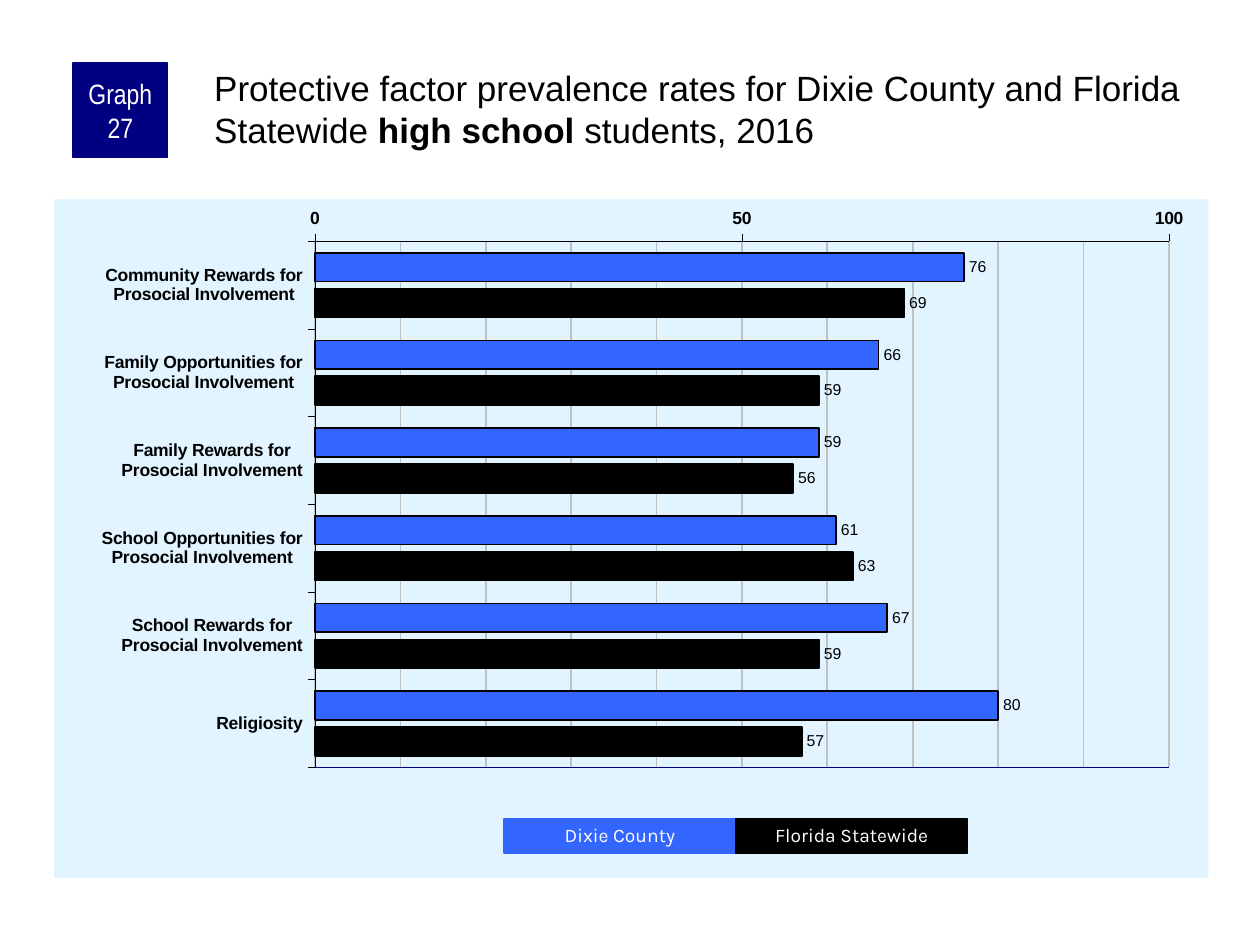
"""Build a slide with a bar chart of protective factor prevalence rates."""
from lxml.etree import SubElement
from pptx import Presentation
from pptx.chart.data import CategoryChartData
from pptx.dml.color import RGBColor
from pptx.enum.chart import XL_AXIS_CROSSES as Crosses
from pptx.enum.chart import XL_CHART_TYPE as ChartType
from pptx.enum.chart import XL_LABEL_POSITION as LabelPosition
from pptx.enum.chart import XL_TICK_MARK as TickMark
from pptx.enum.shapes import MSO_CONNECTOR as Connector
from pptx.enum.shapes import MSO_SHAPE as Shape
from pptx.enum.text import MSO_ANCHOR as Anchor
from pptx.enum.text import PP_ALIGN as Align
from pptx.oxml import parse_xml
from pptx.oxml.ns import nsdecls, qn
from pptx.util import Inches, Pt

COLORS = {"county": "3366FF", "state": "000000", "navy": "000080", "panel": "E1F4FF",
          "grid": "C0C0C0", "ink": "000000", "white": "FFFFFF"}

deck = Presentation()
deck.slide_width, deck.slide_height = Inches(10), Inches(7.5)
page = deck.slides.add_slide(deck.slide_layouts[6])


def area(left, top, width, height):
    """Turn percentages of the slide's size into lengths."""
    wide, high = deck.slide_width / 100, deck.slide_height / 100
    return int(left * wide), int(top * high), int(width * wide), int(height * high)


def style_font(font, size, color, name="Arial", bold=False):
    """Set the face, size, weight and colour of a font."""
    font.name, font.size, font.bold = name, Pt(size), bold
    font.color.rgb = RGBColor.from_string(COLORS[color])


involvement = "Prosocial Involvement"
factors = ["Community Rewards", "Family Opportunities", "Family Rewards",
           "School Opportunities", "School Rewards"]
rates = {"Series 1": (76, 66, 59, 61, 67, 80), "Series 2": (69, 59, 56, 63, 59, 57)}

data = CategoryChartData(number_format="0")
data.categories = [f"{factor} for\n{involvement}" for factor in factors] + ["Religiosity"]
for name, values in rates.items():
    data.add_series(name, values)

chart_area = area(4.3, 21.07, 91.6, 71.87)
chart = page.shapes.add_chart(ChartType.BAR_CLUSTERED, *chart_area, data).chart
chart.has_legend = False
chart.has_title = False
style_font(chart.font, 11.8, "ink")
plot = chart.plots[0]
plot.gap_width, plot.overlap, plot.vary_by_categories = 80, -25, False

for series, color in zip(plot.series, ("county", "state")):
    series.format.fill.solid()
    series.format.fill.fore_color.rgb = RGBColor.from_string(COLORS[color])
    series.format.line.color.rgb = RGBColor.from_string(COLORS["ink"])
    series.format.line.width = Pt(1)
    labels = series.data_labels
    labels.show_value, labels.position = True, LabelPosition.OUTSIDE_END
    style_font(labels.font, 9, "ink")

factor_axis, rate_axis = chart.category_axis, chart.value_axis
for axis in (factor_axis, rate_axis):
    axis.major_tick_mark, axis.minor_tick_mark = TickMark.OUTSIDE, TickMark.NONE
    style_font(axis.tick_labels.font, 10, "ink", bold=True)
    axis.format.line.color.rgb = RGBColor.from_string(COLORS["ink"])
    axis.format.line.width = Pt(0.25)
factor_axis.reverse_order = True
factor_axis.crosses = Crosses.MAXIMUM
rate_axis.minimum_scale, rate_axis.maximum_scale = 0, 100
rate_axis.major_unit, rate_axis.minor_unit = 50, 10
rate_axis.has_minor_gridlines = True
grid_line = rate_axis.major_gridlines.format.line
grid_line.color.rgb = RGBColor.from_string(COLORS["grid"])
grid_line.width = Pt(1)

chart_root = chart.element
minor_grid = next(chart_root.iter(qn("c:minorGridlines")))
minor_grid.append(parse_xml(
    f'<c:spPr {nsdecls("c", "a")}><a:ln w="{Pt(1)}"><a:solidFill>'
    f'<a:srgbClr val="{COLORS["grid"]}"/></a:solidFill></a:ln></c:spPr>'))
chart_root.find(qn("c:chart")).addnext(parse_xml(
    f'<c:spPr {nsdecls("c", "a")}><a:solidFill><a:srgbClr val="{COLORS["panel"]}"/>'
    '</a:solidFill><a:ln><a:noFill/></a:ln></c:spPr>'))

plot_share = {"x": 0.226, "y": 0.062, "w": 0.74, "h": 0.775}
plot_area = next(chart_root.iter(qn("c:plotArea")))
for old_layout in plot_area.findall(qn("c:layout")):
    plot_area.remove(old_layout)
layout = parse_xml(f'<c:layout {nsdecls("c")}><c:manualLayout/></c:layout>')
settings = {"layoutTarget": "inner", "xMode": "edge", "yMode": "edge", **plot_share}
for tag, value in settings.items():
    SubElement(layout[0], qn(f"c:{tag}")).set("val", str(value))
plot_area.insert(0, layout)

chart_left, chart_top, chart_width, chart_height = chart_area
plot_left = int(chart_left + plot_share["x"] * chart_width)
plot_right = int(plot_left + plot_share["w"] * chart_width)
for share, color, weight in ((plot_share["y"], "ink", 0.25),
                             (plot_share["y"] + plot_share["h"], "navy", 1)):
    level = int(chart_top + share * chart_height)
    edge = page.shapes.add_connector(Connector.STRAIGHT, plot_left, level, plot_right, level)
    edge.line.color.rgb = RGBColor.from_string(COLORS[color])
    edge.line.width = Pt(weight)
    SubElement(edge.element.spPr, qn("a:effectLst"))

key_width = 18.4
blocks = [
    ("Graph 27", area(5.8, 6.67, 7.5, 10), "navy", "Arial Narrow", 16, 1, (0.05, 0)),
    ("Dixie County", area(40, 86.67, key_width, 3.6), "county", "Karla", 11, 0.9, (0.1, 0.05)),
    ("Florida Statewide", area(40 + key_width, 86.67, key_width, 3.6), "state", "Karla", 11, 0.9,
     (0.1, 0.05)),
]
for text, place, color, face, size, spacing, (side, end) in blocks:
    block = page.shapes.add_shape(Shape.RECTANGLE, *place)
    block.shadow.inherit = False
    block.fill.solid()
    block.fill.fore_color.rgb = RGBColor.from_string(COLORS[color])
    block.line.color.rgb = RGBColor.from_string(COLORS[color])
    block.line.width = Pt(0.75)
    frame = block.text_frame
    frame.word_wrap, frame.vertical_anchor = True, Anchor.MIDDLE
    frame.margin_left = frame.margin_right = Inches(side)
    frame.margin_top = frame.margin_bottom = Inches(end)
    para = frame.paragraphs[0]
    para.text, para.alignment, para.line_spacing = text, Align.CENTER, spacing
    style_font(para.font, size, "white", face)

title = page.shapes.add_textbox(*area(16.7, 6.67, 79.2, 11.07)).text_frame
title.word_wrap = True
title.margin_left = title.margin_top = Inches(0.03)
title.margin_right = title.margin_bottom = 0
para = title.paragraphs[0]
style_font(para.font, 20, "ink")
for text, bold in (
        ("Protective factor prevalence rates for Dixie County and Florida Statewide ", False),
        ("high school ", True), ("students, 2016", False)):
    span = para.add_run()
    span.text = text
    style_font(span.font, 20, "ink", bold=bold)

deck.save("out.pptx")
